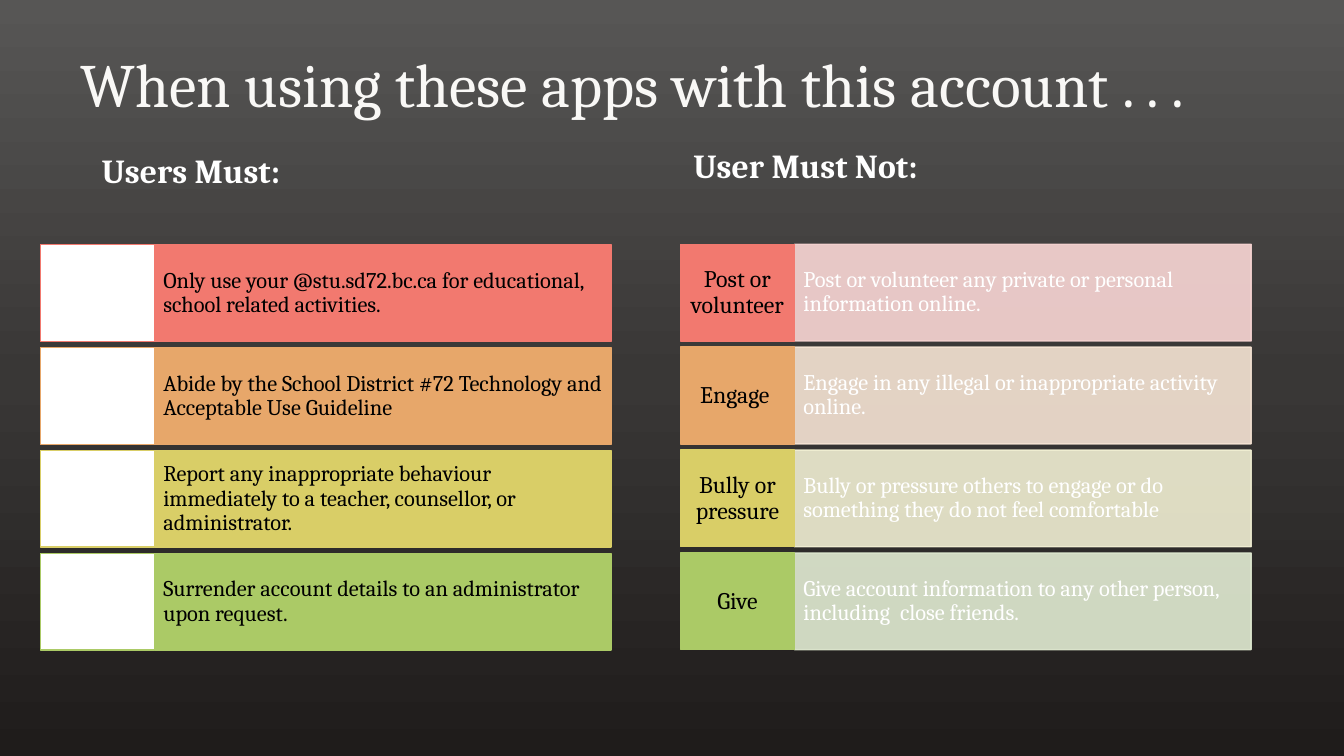
"""Build the slide of rules for using apps with a school account."""
from copy import deepcopy

from lxml.etree import SubElement
from pptx import Presentation
from pptx.dml.color import RGBColor
from pptx.enum.shapes import MSO_SHAPE
from pptx.enum.text import MSO_ANCHOR, PP_ALIGN
from pptx.oxml.ns import qn
from pptx.util import Pt

HUES = {
    "top": "575655", "mid": "393736", "low": "1F1C1B",
    "title": "F9F8F6", "white": "FFFFFF", "black": "000000",
    "red": "F2796F", "orange": "E7A76A", "yellow": "D9CE67", "green": "ABCA66",
    "pale red": "FAD7D5", "pale orange": "F6E4D4",
    "pale yellow": "F1EFD3", "pale green": "E2ECD3",
}
FONT = "Cambria"
ROWS = [
    ("red", "Only use your @stu.sd72.bc.ca for educational, school related activities.",
     "Post or volunteer", "Post or volunteer any private or personal information online."),
    ("orange", "Abide by the School District #72 Technology and Acceptable Use Guideline",
     "Engage ", "Engage in any illegal or inappropriate activity online."),
    ("yellow", "Report any inappropriate behaviour immediately to a teacher, counsellor, or administrator.",
     "Bully or pressure", "Bully or pressure others to engage or do something they do not feel comfortable"),
    ("green", "Surrender account details to an administrator upon request.",
     "Give", "Give account information to any other person, including  close friends."),
]
LEFT, RIGHT = 28.8, 486
TAG, BODY, HIGH, STEP = 81.5, 326.2, 69.1, 73.5


def write(shape, text, size, hue, anchor, bold=False, align=PP_ALIGN.LEFT):
    frame = shape.text_frame
    frame.word_wrap = True
    frame.vertical_anchor = anchor
    para = frame.paragraphs[0]
    para.alignment = align
    para.line_spacing = 0.9
    run = para.add_run()
    run.text = text
    run.font.name = FONT
    run.font.size = Pt(size)
    run.font.bold = bold
    run.font.color.rgb = RGBColor.from_string(HUES[hue])
    return frame


def block(left, top, width, fill, edge):
    box = slide.shapes.add_shape(
        MSO_SHAPE.RECTANGLE, Pt(left), Pt(top), Pt(width), Pt(HIGH))
    box.shadow.inherit = False
    box.fill.solid()
    box.fill.fore_color.rgb = RGBColor.from_string(HUES[fill])
    box.line.color.rgb = RGBColor.from_string(HUES[edge])
    box.line.width = Pt(1)
    return box


deck = Presentation()
deck.slide_width, deck.slide_height = Pt(960), Pt(540)
slide = deck.slides.add_slide(deck.slide_layouts[6])

back = slide.background.fill
back.gradient()
back.gradient_angle = 270
stops = slide.element.find(".//" + qn("a:gsLst"))
stops.insert(1, deepcopy(stops[0]))
for stop, hue, place in zip(back.gradient_stops, ("top", "mid", "low"), (0, 0.5, 1)):
    stop.color.rgb = RGBColor.from_string(HUES[hue])
    stop.position = place

heads = [
    ("When using these apps with this account . . .", 50.4, 10.1, 870.5, 104.4,
     44, "title", MSO_ANCHOR.MIDDLE, False),
    ("Users Must:", 65.5, 74.9, 406, 64.8, 24, "white", MSO_ANCHOR.BOTTOM, True),
    ("User Must Not:", 488.2, 71.3, 408, 64.8, 24, "white", MSO_ANCHOR.BOTTOM, True),
]
for text, left, top, width, high, size, hue, anchor, bold in heads:
    label = slide.shapes.add_textbox(Pt(left), Pt(top), Pt(width), Pt(high))
    write(label, text, size, hue, anchor, bold)

for row, (hue, must, tag, ban) in enumerate(ROWS):
    top = 174.8 + row * STEP
    rule = block(LEFT + TAG, top, BODY, hue, hue)
    block(LEFT, top, TAG, "white", hue)

    top -= 0.3
    pale = block(RIGHT + TAG, top, BODY, "pale " + hue, "pale " + hue)
    for tint in pale.element.spPr.iter(qn("a:srgbClr")):
        SubElement(tint, qn("a:alpha"), val="90000")

    for box, text, ink in ((rule, must, "black"), (pale, ban, "white")):
        frame = write(box, text, 16, ink, MSO_ANCHOR.MIDDLE)
        frame.margin_left = frame.margin_right = Pt(6.4)
        frame.margin_top = frame.margin_bottom = Pt(17.3)

    key = block(RIGHT, top, TAG, hue, hue)
    frame = write(key, tag, 17, "black", MSO_ANCHOR.MIDDLE, align=PP_ALIGN.CENTER)
    frame.margin_left = frame.margin_right = Pt(4.3)
    frame.margin_top = frame.margin_bottom = Pt(7.2)

deck.save("out.pptx")
